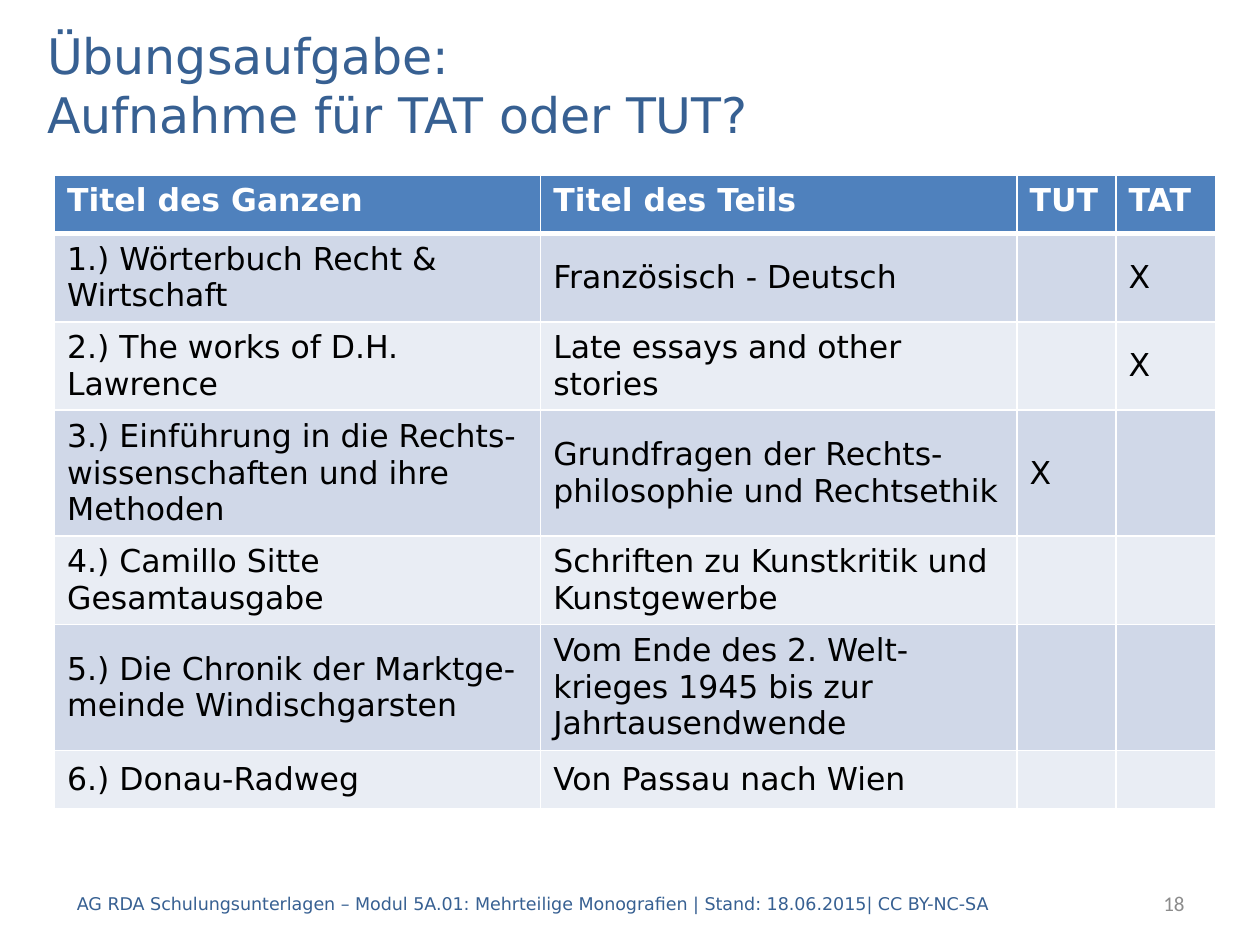
from lxml import etree
from pptx import Presentation
from pptx import util as u
from pptx.dml.color import RGBColor
from pptx.enum import text
from pptx.oxml import ns

COLORS = {
    "heading": "376092", "page": "8C8C8C", "white": "FFFFFF", "black": "000000",
    "header": "4F81BD", "odd": "D0D8E8", "even": "E9EDF4",
}
FONT = "DejaVu Sans"
COLUMN_WIDTHS = [9.8, 9.6, 2, 2]
ONE_LINE, TWO_LINES, THREE_LINES = 1.17, 1.73, 2.46
HEADER = ["Titel des Ganzen", "Titel des Teils", "TUT", "TAT"]
TASKS = [
    (TWO_LINES, "1.) Wörterbuch Recht & Wirtschaft", "Französisch - Deutsch", "", "X"),
    (TWO_LINES, "2.) The works of D.H. Lawrence", "Late essays and other stories", "", "X"),
    (THREE_LINES, "3.) Einführung in die Rechts-wissenschaften und ihre Methoden",
     "Grundfragen der Rechts-philosophie und Rechtsethik", "X", ""),
    (TWO_LINES, "4.) Camillo Sitte Gesamtausgabe",
     "Schriften zu Kunstkritik und Kunstgewerbe", "", ""),
    (THREE_LINES, "5.) Die Chronik der Marktge-meinde Windischgarsten",
     "Vom Ende des 2. Welt-krieges 1945 bis zur Jahrtausendwende", "", ""),
    (ONE_LINE, "6.) Donau-Radweg", "Von Passau nach Wien", "", ""),
]


def add_run(paragraph, wording, size, color, font=FONT, bold=False):
    run = paragraph.add_run()
    run.text = wording
    run.font.name = font
    run.font.size = u.Pt(size)
    run.font.bold = bold
    run.font.color.rgb = RGBColor.from_string(COLORS[color])


def add_label(slide, box, lines, size, color, font=FONT, align=text.PP_ALIGN.LEFT):
    """Add a vertically centred text box; box is left, top, width, height in cm."""
    frame = slide.shapes.add_textbox(*map(u.Cm, box)).text_frame
    frame.word_wrap = True
    frame.vertical_anchor = text.MSO_ANCHOR.MIDDLE
    paragraph = frame.paragraphs[0]
    paragraph.alignment = align
    for number, line in enumerate(lines):
        if number:
            paragraph.add_line_break()
        add_run(paragraph, line, size, color, font)


def set_borders(cell, bottom):
    """Draw white cell borders, 1 pt wide except for the bottom one."""
    properties = cell._tc.get_or_add_tcPr()
    for side, width in (("L", 1), ("R", 1), ("T", 1), ("B", bottom)):
        line = etree.SubElement(properties, ns.qn(f"a:ln{side}"), w=str(u.Pt(width)))
        fill = etree.SubElement(line, ns.qn("a:solidFill"))
        etree.SubElement(fill, ns.qn("a:srgbClr"), val=COLORS["white"])


def fill_cell(cell, wording, fill, is_header):
    set_borders(cell, bottom=3 if is_header else 1)
    cell.fill.solid()
    cell.fill.fore_color.rgb = RGBColor.from_string(COLORS[fill])
    paragraph = cell.text_frame.paragraphs[0]
    if not is_header:
        cell.vertical_anchor = text.MSO_ANCHOR.MIDDLE
        paragraph.space_before = paragraph.space_after = u.Pt(6)
    if wording:
        add_run(paragraph, wording, 18, "white" if is_header else "black", bold=is_header)


def add_task_table(slide):
    rows = [(ONE_LINE, *HEADER), *TASKS]
    size = sum(COLUMN_WIDTHS), sum(row[0] for row in rows)
    table = slide.shapes.add_table(
        len(rows), len(HEADER), u.Cm(1.1), u.Cm(3.54), *map(u.Cm, size)).table
    for column, width in zip(table.columns, COLUMN_WIDTHS):
        column.width = u.Cm(width)
    for number, (height, *wordings) in enumerate(rows):
        table.rows[number].height = u.Cm(height)
        fill = "header" if number == 0 else "odd" if number % 2 else "even"
        for cell, wording in zip(table.rows[number].cells, wordings):
            fill_cell(cell, wording, fill, number == 0)


def main():
    deck = Presentation()
    deck.slide_width, deck.slide_height = u.Cm(25.4), u.Cm(19.05)
    slide = deck.slides.add_slide(deck.slide_layouts[6])
    add_label(slide, (1.3, 17.7, 20.6, 1.02),
              ["AG RDA Schulungsunterlagen – Modul 5A.01: Mehrteilige Monografien"
               " | Stand: 18.06.2015| CC BY-NC-SA"], 10, "heading")
    add_label(slide, (20.1, 17.7, 4.03, 1.02), ["18"], 12, "page", "Calibri",
              text.PP_ALIGN.RIGHT)
    add_task_table(slide)
    add_label(slide, (0.7, 0.5, 24, 2.4),
              ["Übungsaufgabe:", "Aufnahme für TAT oder TUT?"], 28, "heading")
    deck.save("out.pptx")


if __name__ == "__main__":
    main()
